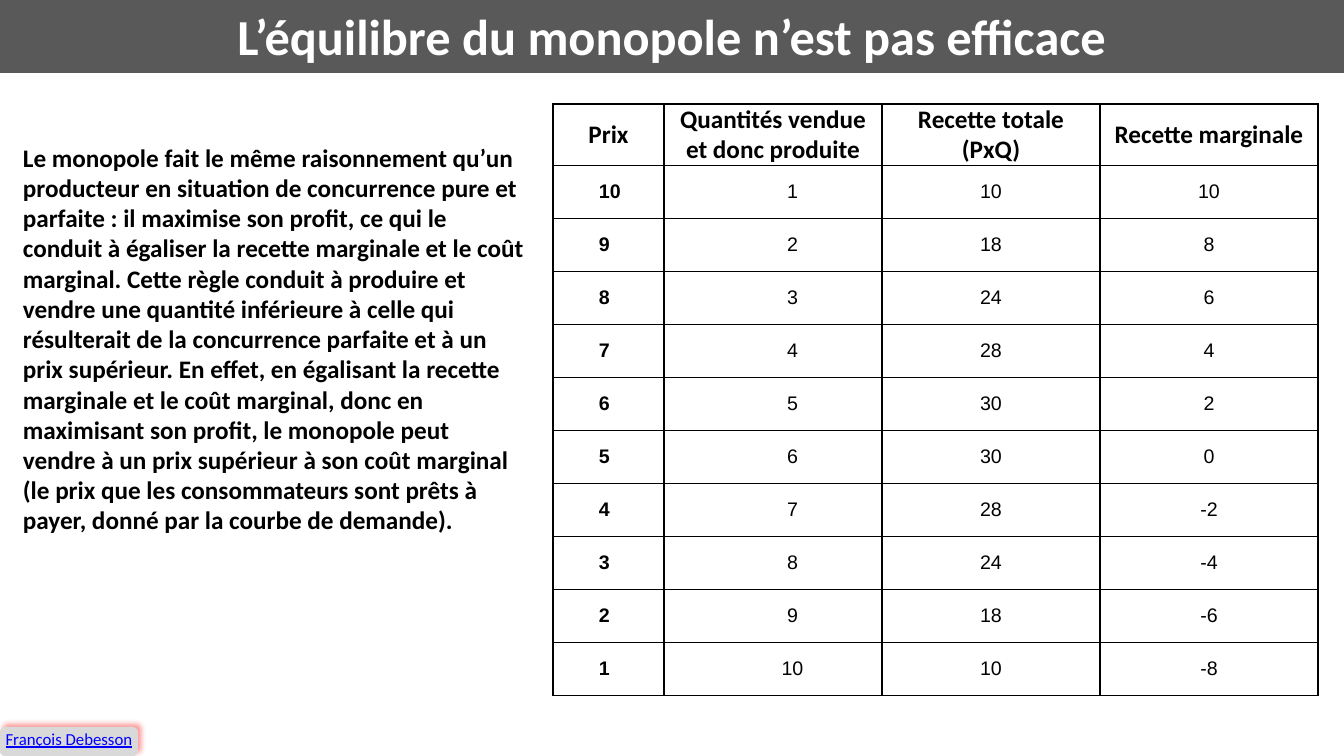
from dataclasses import dataclass

from lxml import etree
from pptx import Presentation
from pptx.dml.color import RGBColor
from pptx.enum.shapes import MSO_SHAPE
from pptx.enum.text import MSO_ANCHOR, PP_ALIGN
from pptx.oxml.ns import qn
from pptx.util import Emu, Pt

ROUNDED = MSO_SHAPE.ROUNDED_RECTANGLE
LEFT, CENTER = PP_ALIGN.LEFT, PP_ALIGN.CENTER
TOP, MIDDLE = MSO_ANCHOR.TOP, MSO_ANCHOR.MIDDLE
PX = 914400 / 100.8
TITLE_ONLY = 5

EXPLANATION = (
    "Le monopole fait le même raisonnement qu’un producteur en situation de "
    "concurrence pure et parfaite : il maximise son profit, ce qui le conduit à "
    "égaliser la recette marginale et le coût marginal. Cette règle conduit à "
    "produire et vendre une quantité inférieure à celle qui résulterait de la "
    "concurrence parfaite et à un prix supérieur. En effet, en égalisant la recette "
    "marginale et le coût marginal, donc en maximisant son profit, le monopole peut "
    "vendre à un prix supérieur à son coût marginal (le prix que les consommateurs "
    "sont prêts à payer, donné par la courbe de demande)."
)
HEADINGS = ["Prix", "Quantités vendue et donc produite",
            "Recette totale\n(PxQ)", "Recette marginale"]


@dataclass(frozen=True)
class Theme:
    banner: str = "595959"
    white: str = "FFFFFF"
    ink: str = "000000"
    tag: str = "D9D9D9"
    glow: str = "FF0000"
    author: str = "0000FF"
    font: str = "Calibri"
    figures_font: str = "Arial"
    title_size: int = 36
    body_size: int = 18
    figures_size: int = 14
    author_size: int = 12


def px(length):
    return Emu(round(length * PX))


def write(frame, text, *, font, size, color, bold=False, underline=False,
          align=LEFT, indent=0):
    for number, line in enumerate(text.split("\n")):
        paragraph = frame.add_paragraph() if number else frame.paragraphs[0]
        paragraph.alignment = align
        if indent:
            properties = paragraph._p.get_or_add_pPr()
            properties.set("marL", str(px(indent)))
            properties.set("indent", "0")
        run = paragraph.add_run()
        run.text = line
        run.font.name = font
        run.font.size = Pt(size)
        run.font.bold = bold
        run.font.underline = underline
        run.font.color.rgb = RGBColor.from_string(color)


class SlideBuilder:
    def __init__(self, slide, theme):
        self.slide = slide
        self.theme = theme

    def paint(self, shape, color):
        shape.fill.solid()
        shape.fill.fore_color.rgb = RGBColor.from_string(color)
        shape.line.fill.background()

    def set_frame(self, frame, inset, anchor):
        frame.word_wrap = True
        frame.vertical_anchor = anchor
        frame.margin_left = frame.margin_right = px(inset)
        frame.margin_top = frame.margin_bottom = px(inset)

    def title(self, text, left, top, width, height):
        banner = self.slide.shapes.title
        banner.left, banner.top = px(left), px(top)
        banner.width, banner.height = px(width), px(height)
        self.paint(banner, self.theme.banner)
        self.set_frame(banner.text_frame, 4, MIDDLE)
        write(banner.text_frame, text, font=self.theme.font, size=self.theme.title_size,
              color=self.theme.white, bold=True, align=CENTER)

    def body(self, text, left, top, width, height):
        box = self.slide.shapes.add_textbox(px(left), px(top), px(width), px(height))
        box.text_frame.word_wrap = True
        write(box.text_frame, text, font=self.theme.font, size=self.theme.body_size,
              color=self.theme.ink, bold=True)

    def author_tag(self, text, left, top, width, height):
        tag = self.slide.shapes.add_shape(ROUNDED, px(left), px(top), px(width), px(height))
        self.paint(tag, self.theme.tag)
        tag.shadow.inherit = False
        effects = tag._element.spPr.find(qn("a:effectLst"))
        shadow = etree.SubElement(effects, qn("a:outerShdw"), blurRad=str(Pt(4)),
                                  dist=str(Pt(3)), dir=str(315 * 60000), algn="bl",
                                  rotWithShape="0")
        glow = etree.SubElement(shadow, qn("a:srgbClr"), val=self.theme.glow)
        etree.SubElement(glow, qn("a:alpha"), val="40000")
        self.set_frame(tag.text_frame, 0, TOP)
        write(tag.text_frame, text, font=self.theme.font, size=self.theme.author_size,
              color=self.theme.author, underline=True, align=CENTER)

    def cell(self, cell, text, **text_format):
        cell.vertical_anchor = MIDDLE
        cell.margin_left = cell.margin_right = px(7)
        cell.margin_top = cell.margin_bottom = 0
        properties = cell._tc.get_or_add_tcPr()
        for side in ("a:lnL", "a:lnR", "a:lnT", "a:lnB"):
            border = etree.SubElement(properties, qn(side), w=str(Pt(1)))
            fill = etree.SubElement(border, qn("a:solidFill"))
            etree.SubElement(fill, qn("a:srgbClr"), val=self.theme.ink)
        cell.fill.background()
        write(cell.text_frame, text, color=self.theme.ink, **text_format)

    def table(self, headings, records, left, top, widths, heading_height, row_height):
        heights = [heading_height] + [row_height] * len(records)
        table = self.slide.shapes.add_table(
            len(heights), len(widths), px(left), px(top),
            px(sum(widths)), px(sum(heights))).table
        table.first_row = table.horz_banding = False
        for column, width in zip(table.columns, widths):
            column.width = px(width)
        for row, height in zip(table.rows, heights):
            row.height = px(height)
        for column, heading in enumerate(headings):
            self.cell(table.cell(0, column), heading, font=self.theme.font,
                      size=self.theme.body_size, bold=True, align=CENTER)
        for row, record in enumerate(records, 1):
            for column, figure in enumerate(record):
                self.cell(table.cell(row, column), str(figure),
                          font=self.theme.figures_font, size=self.theme.figures_size,
                          bold=column == 0, align=CENTER if column else LEFT,
                          indent=39 if column < 2 else 0)


def main():
    presentation = Presentation()
    presentation.slide_width, presentation.slide_height = px(1344), px(756)
    slide = presentation.slides.add_slide(presentation.slide_layouts[TITLE_ONLY])
    builder = SlideBuilder(slide, Theme())
    revenues = [(11 - quantity, quantity, (11 - quantity) * quantity, 12 - 2 * quantity)
                for quantity in range(1, 11)]

    builder.title("L’équilibre du monopole n’est pas efficace", 0, -3, 1344, 76)
    builder.table(HEADINGS, revenues, 553, 104, [111, 218, 218, 218], 61, 53)
    builder.author_tag("François Debesson", 0, 727, 138, 29)
    builder.body(EXPLANATION, 13, 137, 524, 402)
    presentation.save("out.pptx")


if __name__ == "__main__":
    main()
